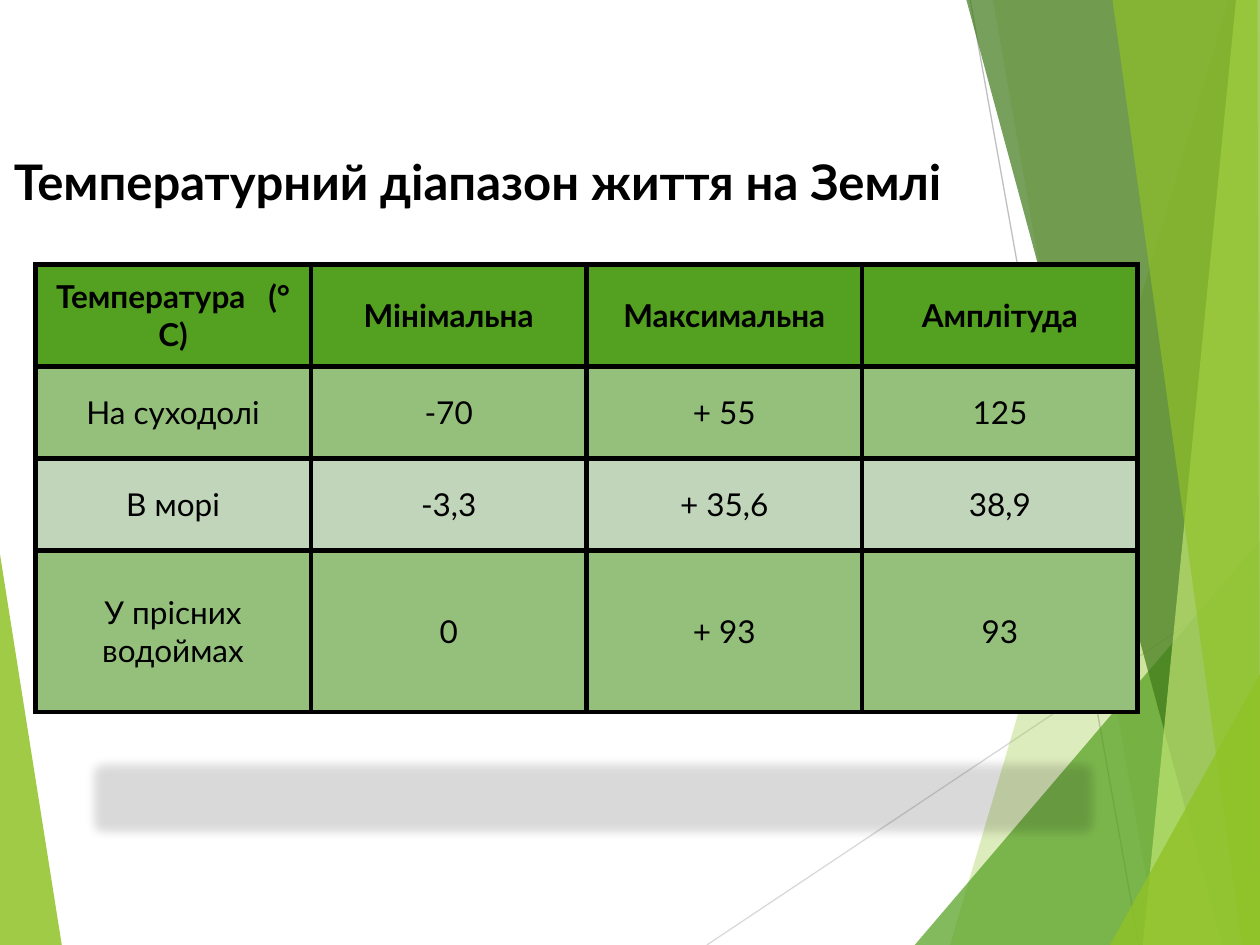
from lxml import etree
from pptx import Presentation
from pptx.dml.color import RGBColor
from pptx.enum.shapes import MSO_CONNECTOR, MSO_SHAPE
from pptx.enum.text import MSO_ANCHOR, MSO_AUTO_SIZE, PP_ALIGN
from pptx.oxml.ns import qn
from pptx.util import Inches, Pt

LINE = MSO_CONNECTOR.STRAIGHT
RECT = MSO_SHAPE.RECTANGLE
MIDDLE = MSO_ANCHOR.MIDDLE
FIXED = MSO_AUTO_SIZE.NONE
LEFT, CENTER = PP_ALIGN.LEFT, PP_ALIGN.CENTER

COLS, ROWS = 100, 75
WIDTH, HEIGHT = Inches(10), Inches(7.5)
UNIT = WIDTH / COLS

HUES = {
    "lime": "90C226", "green": "54A021", "forest": "3F7819", "light": "C0E474",
    "pale": "D9D9D9", "grey": "BFBFBF", "black": "000000",
    "odd": "95C07C", "even": "C1D5BA",
}
FONT = {"name": "Lato", "size": Pt(18), "bold": False}
HEAD = {**FONT, "bold": True}
TITLE = {**HEAD, "size": Pt(28)}
CELL = {"vertical_anchor": MIDDLE}
FRAME = {"word_wrap": True, "auto_size": FIXED, "vertical_anchor": MIDDLE}

RAYS = [("pale", (56.1, 75), (100, 45.7)), ("grey", (77, 0), (90.4, 75))]
WEDGE = ("lime", 85, [(0, 44), (4.9, 75), (0, 75)])
SHARDS = [
    ("lime", 30, [(97.5, 0), (75.4, 75), (100, 75), (100, 0)]),
    ("lime", 20, [(78.8, 0), (91.9, 75), (100, 75), (100, 0)]),
    ("green", 72, [(72.6, 75), (100, 42.9), (100, 75)]),
    ("forest", 70, [(76.7, 0), (97, 75), (100, 75), (100, 0)]),
    ("light", 70, [(98.1, 0), (90.7, 75), (100, 75), (100, 0)]),
    ("lime", 65, [(88.3, 0), (98.6, 75), (100, 75), (99.8, 0)]),
    ("lime", 80, [(88.1, 75), (100, 53.5), (100, 75)]),
]
DATA = [
    ["Температура   (° С)", "Мінімальна", "Максимальна", "Амплітуда"],
    ["На суходолі", "-70", "+ 55", "125"],
    ["В морі", "-3,3", "+ 35,6", "38,9"],
    ["У прісних водоймах", "0", "+ 93", "93"],
]
TALL = [8.1, 7.3, 7.3, 12.8]
BANDS = ["green", "odd", "even", "odd"]


def span(num):
    """Turn grid units into a length."""
    return round(num * UNIT)


def tint(hue):
    """Look up a named colour."""
    return RGBColor.from_string(HUES[hue])


def style(item, form):
    """Set each format value on an item."""
    for key, val in form.items():
        setattr(item, key, val)


def write(frame, text, form, align):
    """Put one formatted paragraph in a text frame."""
    para = frame.paragraphs[0]
    para.alignment = align
    run = para.add_run()
    run.text = text
    style(run.font, form)
    run.font.color.rgb = tint("black")


def paint(shape, hue, alpha):
    """Give a shape a clear fill with no line or shadow."""
    shape.shadow.inherit = False
    shape.fill.solid()
    shape.fill.fore_color.rgb = tint(hue)
    shape.line.fill.background()
    color = shape._element.spPr.find(qn("a:solidFill"))[0]
    etree.SubElement(color, qn("a:alpha"), val=str(alpha * 1000))


def shard(slide, hue, alpha, dots):
    """Draw one clear polygon."""
    spots = [(span(x), span(y)) for x, y in dots]
    pen = slide.shapes.build_freeform(*spots[0], scale=1.0)
    pen.add_line_segments(spots[1:], close=True)
    paint(pen.convert_to_shape(), hue, alpha)


def ray(slide, hue, start, end):
    """Draw one thin line."""
    line = slide.shapes.add_connector(LINE, *map(span, start + end))
    line.line.width = Pt(0.75)
    line.line.color.rgb = tint(hue)
    etree.SubElement(line._element.spPr, qn("a:effectLst"))


def decor(slide):
    """Draw the green facets at both sides."""
    shard(slide, *WEDGE)
    for item in RAYS:
        ray(slide, *item)
    for item in SHARDS:
        shard(slide, *item)


def glow(slide, box):
    """Draw the soft grey bar."""
    bar = slide.shapes.add_shape(RECT, *map(span, box))
    paint(bar, "black", 15)
    soft = bar._element.spPr.find(qn("a:effectLst"))
    etree.SubElement(soft, qn("a:softEdge"), rad=str(span(1)))


def title(slide, box):
    """Place the slide title."""
    head = slide.shapes.title
    keys = ("left", "top", "width", "height")
    style(head, dict(zip(keys, map(span, box))))
    style(head.text_frame, FRAME)
    write(head.text_frame, "Температурний діапазон життя на Землі", TITLE, LEFT)


def edge(cell):
    """Draw black borders round a cell."""
    prop = cell._tc.get_or_add_tcPr()
    for num, side in enumerate("LRTB"):
        line = etree.Element(qn(f"a:ln{side}"), w=str(Pt(3)))
        fill = etree.SubElement(line, qn("a:solidFill"))
        etree.SubElement(fill, qn("a:srgbClr"), val=HUES["black"])
        prop.insert(num, line)


def grid(slide, box):
    """Place the temperature table."""
    shape = slide.shapes.add_table(len(DATA), len(DATA[0]), *map(span, box))
    table = shape.table
    for row, tall, band, texts in zip(table.rows, TALL, BANDS, DATA):
        row.height = span(tall)
        for cell, text in zip(row.cells, texts):
            style(cell, CELL)
            cell.fill.solid()
            cell.fill.fore_color.rgb = tint(band)
            edge(cell)
            write(cell.text_frame, text, HEAD if band == "green" else FONT, CENTER)


def main():
    """Build and save the slide."""
    deck = Presentation()
    deck.slide_width, deck.slide_height = WIDTH, HEIGHT
    slide = deck.slides.add_slide(deck.slide_layouts[5])
    decor(slide)
    glow(slide, (6.2, 59.5, 0.816 * COLS, 0.103 * ROWS))
    title(slide, (0.1, 11.5, 79.5, 5.7))
    grid(slide, (2.8, 21, 87.5, sum(TALL)))
    deck.save("out.pptx")


if __name__ == "__main__":
    main()
